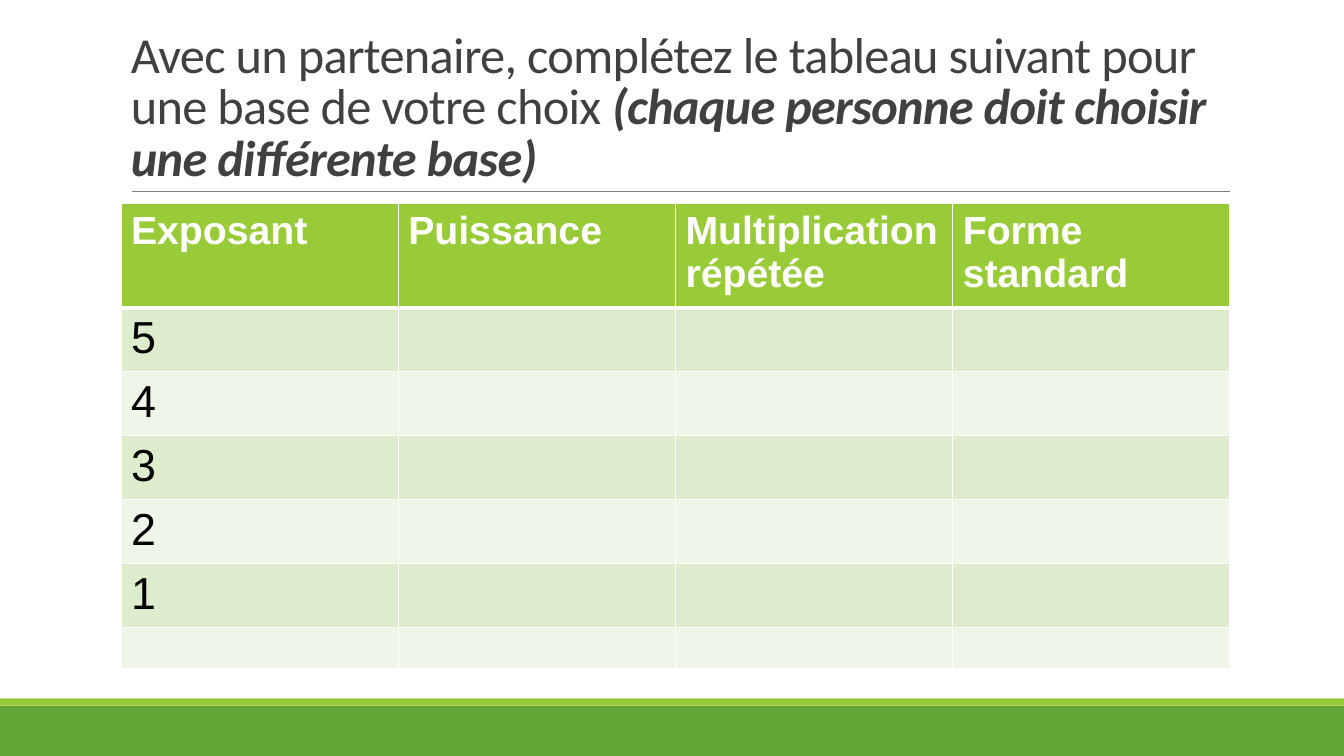
from lxml import etree
from pptx import Presentation
from pptx.dml.color import RGBColor
from pptx.enum.shapes import MSO_CONNECTOR, MSO_SHAPE
from pptx.enum.text import MSO_ANCHOR
from pptx.oxml import parse_xml
from pptx.oxml.ns import nsdecls, qn
from pptx.util import Inches, Pt

RECTANGLE = MSO_SHAPE.RECTANGLE
STRAIGHT = MSO_CONNECTOR.STRAIGHT
BOTTOM = MSO_ANCHOR.BOTTOM

HEADERS = ["Exposant", "Puissance", "Multiplication répétée", "Forme standard"]
EXPONENTS = ["5", "4", "3", "2", "1", ""]
TITLE_SPANS = [
    ("Avec un partenaire, complétez le tableau suivant pour une base de votre choix ", False),
    ("(chaque personne doit choisir une différente base)", True),
]


def color(value):
    return RGBColor.from_string(value)


class SlideBuilder:
    GREEN = "63A537"
    LIME = "99CB38"
    BANDS = ("DEECCE", "EFF6E8")
    WHITE = "FFFFFF"
    BLACK = "000000"
    GRAY = "808080"
    TITLE_COLOR = "404040"
    TITLE_FONT = "Calibri"
    TABLE_FONT = "Arial"

    def __init__(self, slide):
        self.slide = slide

    def bar(self, top, height, fill):
        """Draw a band across the full slide width."""
        shape = self.slide.shapes.add_shape(
            RECTANGLE, 0, Inches(top), Inches(13.33), Inches(height))
        shape.shadow.inherit = False
        shape.fill.solid()
        shape.fill.fore_color.rgb = color(fill)
        shape.line.fill.background()

    def rule(self, left, right, top):
        """Draw a thin horizontal line."""
        line = self.slide.shapes.add_connector(
            STRAIGHT, Inches(left), Inches(top), Inches(right), Inches(top))
        line.line.color.rgb = color(self.GRAY)
        line.line.width = Pt(0.5)
        etree.SubElement(line._element.spPr, qn("a:effectLst"))

    def title(self, left, top, width, height, spans):
        box = self.slide.shapes.add_textbox(
            Inches(left), Inches(top), Inches(width), Inches(height))
        frame = box.text_frame
        frame.word_wrap = True
        frame.vertical_anchor = BOTTOM
        para = frame.paragraphs[0]
        para.line_spacing = 0.85
        para.font.name = self.TITLE_FONT
        para.font.size = Pt(36)
        para.font.color.rgb = color(self.TITLE_COLOR)
        for text, emphasized in spans:
            span = para.add_run()
            span.text = text
            span.font.bold = span.font.italic = emphasized
            span._r.get_or_add_rPr().set("spc", "-50")

    def cell_borders(self, cell, top=1, bottom=1):
        properties = cell._tc.get_or_add_tcPr()
        for side, width in (("L", 1), ("R", 1), ("T", top), ("B", bottom)):
            properties.append(parse_xml(
                f'<a:ln{side} {nsdecls("a")} w="{Pt(width)}"><a:solidFill>'
                f'<a:srgbClr val="{self.WHITE}"/></a:solidFill></a:ln{side}>'))

    def cell(self, cell, text, fill, size, ink, bold):
        cell.fill.solid()
        cell.fill.fore_color.rgb = color(fill)
        if text:
            cell.text = text
            font = cell.text_frame.paragraphs[0].font
            font.name = self.TABLE_FONT
            font.size = Pt(size)
            font.bold = bold
            font.color.rgb = color(ink)

    def table(self, left, top, width, row_heights, headers, first_column):
        table = self.slide.shapes.add_table(
            len(row_heights), len(headers), Inches(left), Inches(top),
            Inches(width), Inches(sum(row_heights))).table
        for row, height in zip(table.rows, row_heights):
            row.height = Inches(height)
        for index, header in enumerate(headers):
            heading = table.cell(0, index)
            self.cell_borders(heading, bottom=3)
            self.cell(heading, header, self.LIME, 28, self.WHITE, True)
            for row, label in enumerate(first_column, start=1):
                cell = table.cell(row, index)
                self.cell_borders(cell, top=3 if row == 1 else 1)
                self.cell(cell, label if index == 0 else "",
                          self.BANDS[(row - 1) % 2], 32, self.BLACK, False)


def main():
    deck = Presentation()
    deck.slide_width = Inches(13.33)
    deck.slide_height = Inches(7.5)
    page = SlideBuilder(deck.slides.add_slide(deck.slide_layouts[6]))
    page.bar(7, 0.5, page.GREEN)
    page.bar(6.93, 0.07, page.LIME)
    page.rule(1.31, 12.2, 1.9)
    page.title(1.2, 0.31, 11, 1.59, TITLE_SPANS)
    page.table(1.2, 2.02, 11, [0.96] + [0.6] * 5 + [0.41], HEADERS, EXPONENTS)
    deck.save("out.pptx")


if __name__ == "__main__":
    main()
